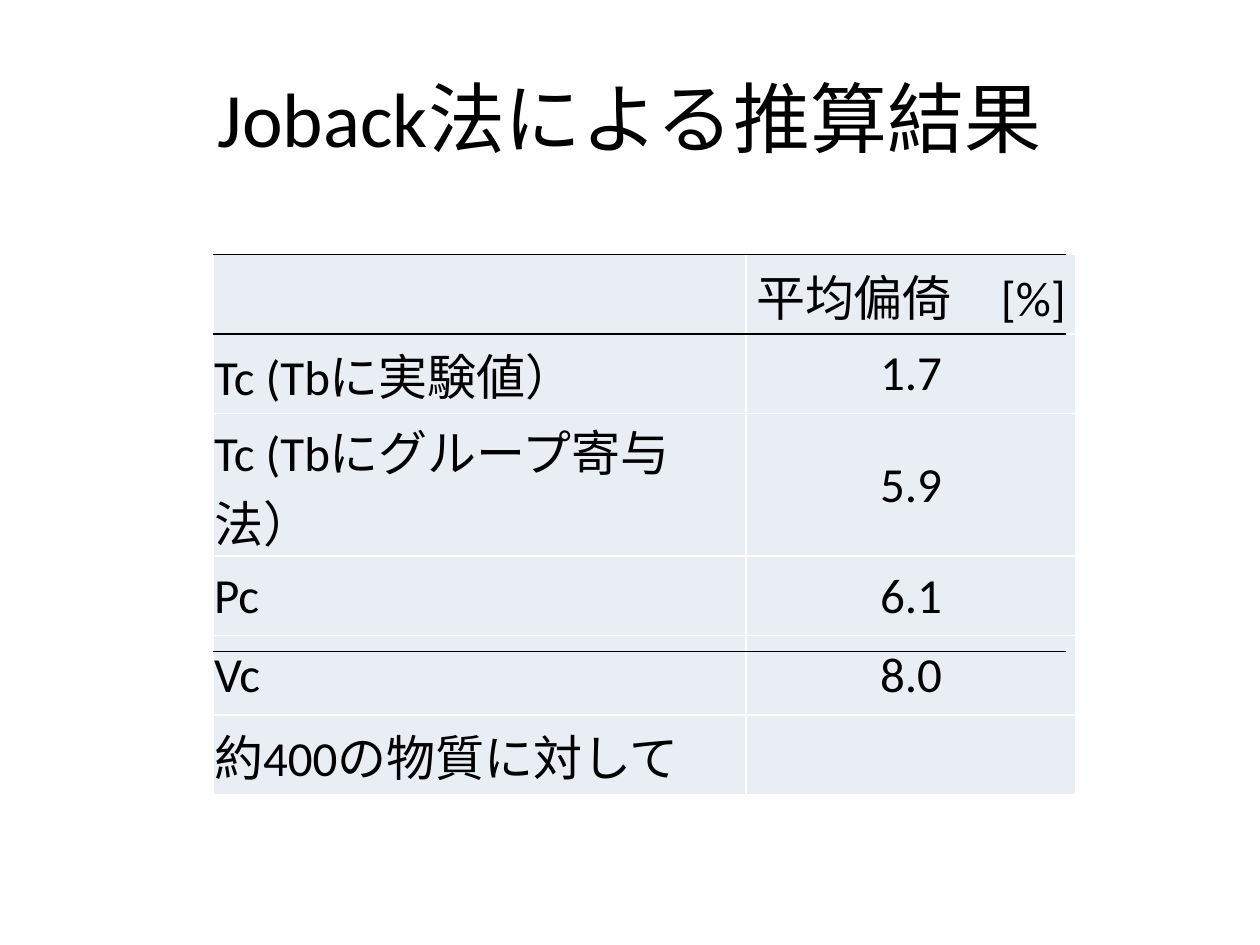
from lxml import etree
from pptx import Presentation
from pptx.dml.color import RGBColor
from pptx.enum.shapes import MSO_CONNECTOR
from pptx.enum.text import MSO_ANCHOR, PP_ALIGN
from pptx.oxml.ns import qn
from pptx.util import Inches, Pt

LEFT, CENTER = PP_ALIGN.LEFT, PP_ALIGN.CENTER
MIDDLE = MSO_ANCHOR.MIDDLE
STRAIGHT = MSO_CONNECTOR.STRAIGHT

# Content
TITLE = "Joback法による推算結果"
ROWS = [
    ("", "平均偏倚　[%]"),
    ("Tc (Tbに実験値）", "1.7"),
    ("Tc (Tbにグループ寄与法）", "5.9"),
    ("Pc", "6.1"),
    ("Vc", "8.0"),
    ("約400の物質に対して", ""),
]
RULED_ROWS = (5, 1, 0)  # rows with a black rule along their top

# Style and grid, in inches
COLORS = {"text": "000000", "cell": "E9EDF4", "border": "FFFFFF"}
FONT = "Calibri"
TABLE_X, TABLE_Y = 1.69, 2.02
COL_WIDTHS = (4.23, 2.62)
COL_ALIGN = (LEFT, CENTER)
ROW_H = 0.63
RULE_W = 6.77


def color(name):
    return RGBColor.from_string(COLORS[name])


def add_text(tf, text, size, align):
    p = tf.paragraphs[0]
    p.alignment = align
    r = p.add_run()
    r.text = text
    r.font.name, r.font.size = FONT, Pt(size)
    r.font.color.rgb = color("text")


def add_borders(cell):
    tcPr = cell._tc.get_or_add_tcPr()
    for side in ("lnL", "lnR", "lnT", "lnB"):
        ln = etree.SubElement(tcPr, qn(f"a:{side}"), w=str(Pt(1)))
        fill = etree.SubElement(ln, qn("a:solidFill"))
        etree.SubElement(fill, qn("a:srgbClr"), val=COLORS["border"])


prs = Presentation()
prs.slide_width, prs.slide_height = Inches(10), Inches(7.5)
s = prs.slides.add_slide(prs.slide_layouts[5])

# Title
title = s.shapes.title
title.left, title.top = Inches(0.5), Inches(0.3)
title.width, title.height = Inches(9), Inches(1.25)
title.text_frame.vertical_anchor = MIDDLE
add_text(title.text_frame, TITLE, 44, CENTER)

# Table of mean deviations
table = s.shapes.add_table(
    len(ROWS), len(COL_WIDTHS), Inches(TABLE_X), Inches(TABLE_Y),
    Inches(sum(COL_WIDTHS)), Inches(ROW_H * len(ROWS))).table
table.first_row = table.horz_banding = False
for column, width in zip(table.columns, COL_WIDTHS):
    column.width = Inches(width)
for i, row in enumerate(ROWS):
    table.rows[i].height = Inches(ROW_H)
    for j, text in enumerate(row):
        cell = table.cell(i, j)
        add_borders(cell)
        cell.fill.solid()
        cell.fill.fore_color.rgb = color("cell")
        cell.vertical_anchor = MIDDLE
        cell.margin_left = cell.margin_right = cell.margin_top = Inches(0.01)
        cell.margin_bottom = 0
        if text:
            add_text(cell.text_frame, text, 28, COL_ALIGN[j])

# Black rules on the row grid
for row in RULED_ROWS:
    y = Inches(TABLE_Y + row * ROW_H)
    rule = s.shapes.add_connector(
        STRAIGHT, Inches(TABLE_X), y, Inches(TABLE_X + RULE_W), y)
    rule.line.color.rgb = color("text")
    rule.line.width = Pt(0.75)
    etree.SubElement(rule._element.spPr, qn("a:effectLst"))

prs.save("out.pptx")
